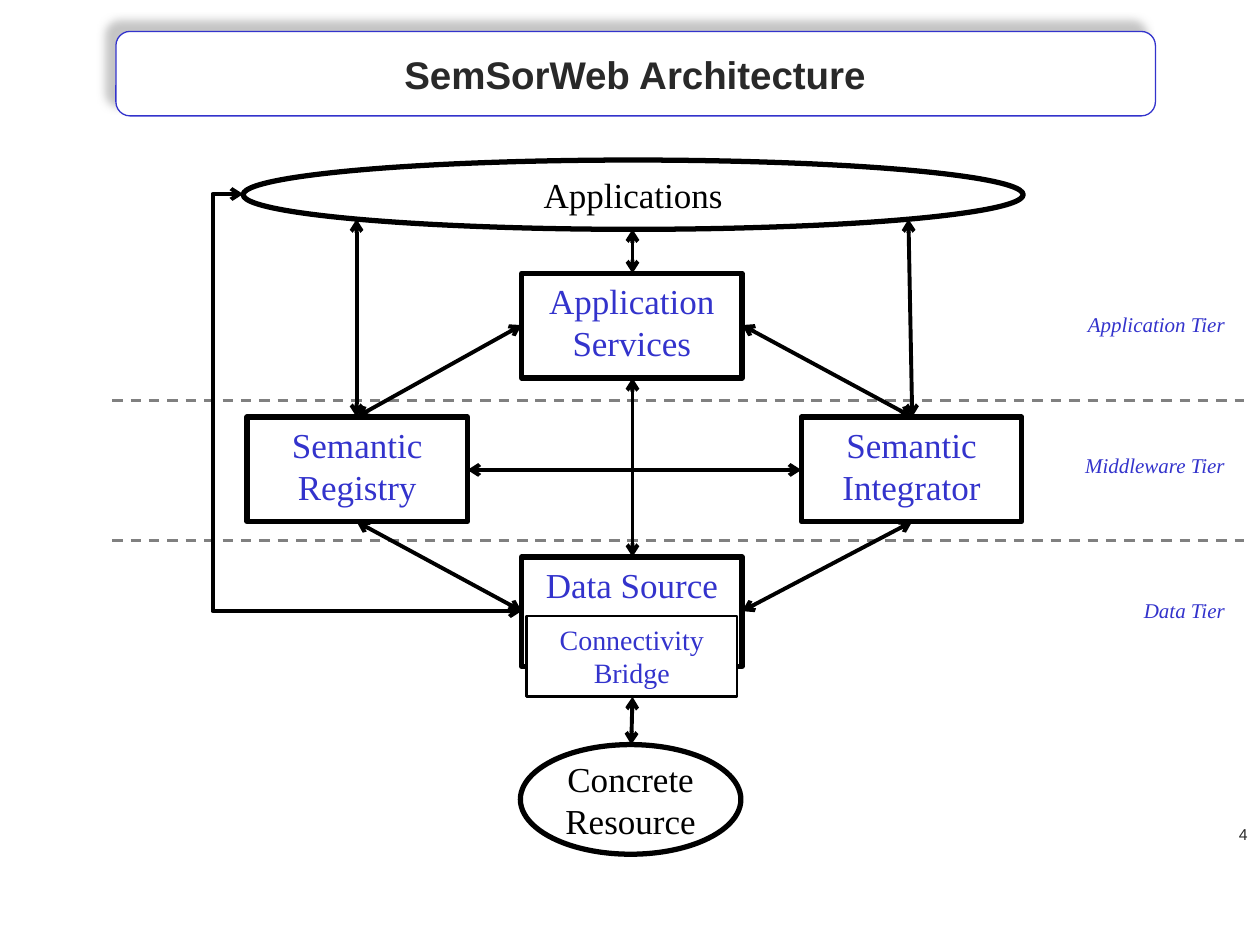
from pptx import Presentation
from pptx.dml.color import RGBColor
from pptx.enum import dml, shapes, text
from pptx.oxml import parse_xml
from pptx.oxml.ns import nsdecls, qn
from pptx.util import Inches, Pt
from lxml import etree

COLORS = {"white": "FFFFFF", "black": "000000", "blue": "3333CC",
          "gray": "808080", "dark": "292929", "shadow": "B2B2B2"}
SERIF, SANS = "Times New Roman", "Arial"
RECT, OVAL = shapes.MSO_SHAPE.RECTANGLE, shapes.MSO_SHAPE.OVAL
PANEL = shapes.MSO_SHAPE.ROUNDED_RECTANGLE
TOP, MIDDLE = text.MSO_ANCHOR.TOP, text.MSO_ANCHOR.MIDDLE
CENTER, RIGHT = text.PP_ALIGN.CENTER, text.PP_ALIGN.RIGHT
STRAIGHT, ELBOW = shapes.MSO_CONNECTOR.STRAIGHT, shapes.MSO_CONNECTOR.ELBOW


def rgb(name):
    return RGBColor.from_string(COLORS[name])


def write(tf, content, size=20, color="blue", font=SERIF, align=CENTER,
          anchor=TOP, bold=False, italic=False):
    tf.word_wrap = True
    tf.vertical_anchor = anchor
    tf.text = content
    for p in tf.paragraphs:
        p.alignment = align
        for r in p.runs:
            f = r.font
            f.name, f.size, f.bold, f.italic = font, Pt(size), bold, italic
            f.color.rgb = rgb(color)


class Builder:
    def __init__(self, prs):
        self.s = prs.slides.add_slide(prs.slide_layouts[5])

    def title(self, content, *at):
        sp = self.s.shapes.title
        sp.left, sp.top, sp.width, sp.height = map(Inches, at)
        write(sp.text_frame, content, 22, "dark", SANS, anchor=MIDDLE, bold=True)
        self.s.shapes._spTree.append(sp._element)

    def shape(self, kind, at, content="", fill=None, line="black", weight=3, **fmt):
        sp = self.s.shapes.add_shape(kind, *map(Inches, at))
        sp.shadow.inherit = False
        if fill:
            sp.fill.solid()
            sp.fill.fore_color.rgb = rgb(fill)
        else:
            sp.fill.background()
        sp.line.color.rgb = rgb(line)
        sp.line.width = Pt(weight)
        if content:
            write(sp.text_frame, content, **fmt)
        return sp

    def panel(self, *at):
        sp = self.shape(PANEL, at, fill="white", line="blue", weight=0.75)
        effects = sp._element.spPr.find(qn("a:effectLst"))
        effects.append(parse_xml(
            f'<a:outerShdw {nsdecls("a")} blurRad="{Pt(5)}" dist="{Pt(8.5)}" '
            f'dir="13500000" algn="ctr" rotWithShape="0">'
            f'<a:srgbClr val="{COLORS["shadow"]}"><a:alpha val="75000"/></a:srgbClr>'
            f'</a:outerShdw>'))

    def label(self, content, at, **fmt):
        sp = self.s.shapes.add_textbox(*map(Inches, at))
        write(sp.text_frame, content, align=RIGHT, **fmt)

    def line(self, start, end, kind=STRAIGHT, color="black", weight=2.25):
        cn = self.s.shapes.add_connector(kind, *map(Inches, start + end))
        cn.line.color.rgb = rgb(color)
        cn.line.width = Pt(weight)
        etree.SubElement(cn._element.spPr, qn("a:effectLst"))
        return cn

    def divider(self, y):
        cn = self.line((0.89, y), (9.87, y), color="gray", weight=1.5)
        cn.line.dash_style = dml.MSO_LINE.DASH

    def arrow(self, start, end, bend=None):
        cn = self.line(start, end, STRAIGHT if bend is None else ELBOW)
        ln = cn.line._get_or_add_ln()
        for tag in ("a:headEnd", "a:tailEnd"):
            etree.SubElement(ln, qn(tag), type="arrow")
        if bend is not None:
            guides = cn._element.spPr.find(qn("a:prstGeom")).get_or_add_avLst()
            etree.SubElement(guides, qn("a:gd"), name="adj1",
                             fmla=f"val {round(bend * 100000)}")


def main():
    prs = Presentation()
    prs.slide_width, prs.slide_height = Inches(10), Inches(7.5)
    b = Builder(prs)
    b.panel(0.92, 0.25, 8.25, 0.67)

    for y in (3.18, 4.29):
        b.divider(y)
    for name, left, top in (("Application Tier", 7.64, 2.42),
                            ("Middleware Tier", 7.55, 3.54),
                            ("Data Tier", 7.75, 4.69)):
        b.label(name, (left, top, 9.82 - left, 0.4), size=12, italic=True)

    box_w, box_h = 1.75, 0.83
    for name, left, top, height in (("Application\nServices", 4.14, 2.17, box_h),
                                    ("Semantic Registry", 1.96, 3.31, box_h),
                                    ("Semantic Integrator", 6.36, 3.31, box_h),
                                    ("Data Source", 4.14, 4.42, 0.87)):
        b.shape(RECT, (left, top, box_w, height), name)

    apps_left = (1.93, 1.54)
    services_left, services_right = (4.14, 2.58), (5.89, 2.58)
    source_left, source_right = (4.14, 4.85), (5.89, 4.85)
    registry_top, registry_bottom = (2.83, 3.31), (2.83, 4.14)
    integrator_top, integrator_bottom = (7.24, 3.31), (7.24, 4.14)
    for start, end in (((5.02, 5.53), (5.01, 5.91)),
                       ((5.02, 3), (5.02, 4.42)),
                       (services_right, integrator_top),
                       (integrator_bottom, source_right),
                       (source_left, registry_bottom),
                       (registry_top, services_left),
                       ((3.71, 3.73), (6.36, 3.73)),
                       ((5.02, 1.82), (5.02, 2.17)),
                       ((2.83, 1.74), registry_top),
                       ((7.21, 1.74), integrator_top)):
        b.arrow(start, end)
    b.arrow(apps_left, source_left, bend=-0.11)

    b.shape(RECT, (4.18, 4.89, 1.67, 0.64), "Connectivity Bridge",
            fill="white", weight=1.5, size=16)
    b.shape(OVAL, (1.93, 1.27, 6.19, 0.55), "Applications",
            color="black", anchor=MIDDLE)
    b.shape(OVAL, (4.13, 5.91, box_w, 0.87), "Concrete Resource",
            color="black", anchor=MIDDLE)

    b.title("SemSorWeb Architecture", 1.08, 0.25, 7.92, 0.67)
    b.label("4", (7.92, 6.5, 2.08, 0.25), size=9, color="dark", font=SANS)
    prs.save("out.pptx")


if __name__ == "__main__":
    main()
